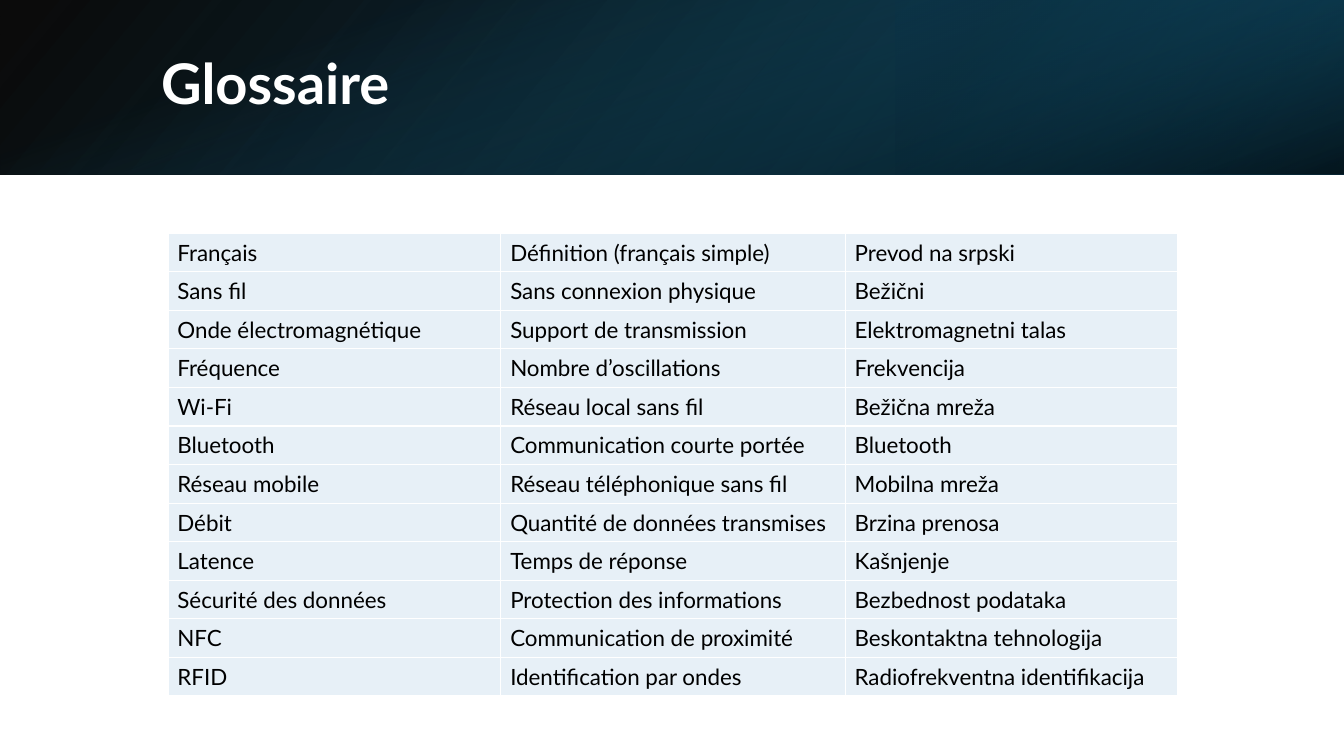
from dataclasses import dataclass

from lxml import etree
from pptx import Presentation
from pptx.dml.color import RGBColor
from pptx.enum.shapes import MSO_SHAPE
from pptx.enum.text import MSO_ANCHOR
from pptx.oxml import parse_xml
from pptx.oxml.ns import nsdecls, qn
from pptx.slide import Slide
from pptx.table import _Cell
from pptx.text.text import _Paragraph
from pptx.util import Emu, Pt

RECT = MSO_SHAPE.RECTANGLE
MIDDLE = MSO_ANCHOR.MIDDLE
SCALE = 9525
WIDTH, HEIGHT, BAND = 1280, 720, 166


@dataclass(frozen=True)
class Theme:
    font: str = "Lato"
    title: int = 40
    body: int = 16
    black: str = "000000"
    white: str = "FFFFFF"
    cell: str = "E7F0F7"
    teal: str = "156082"
    blue: str = "104862"
    navy: str = "0B3041"


@dataclass(frozen=True)
class Stop:
    pos: int
    color: str
    alpha: int


@dataclass(frozen=True)
class Layer:
    left: int
    top: int
    width: int
    height: int
    angle: int
    stops: tuple[Stop, ...]
    turn: int = 0
    flip: bool = False


THEME = Theme()
SIDE = (WIDTH - BAND) // 2
LAYERS = (
    Layer(0, 0, WIDTH, BAND, 140,
          (Stop(0, THEME.black, 96), Stop(100, THEME.blue, 100)), flip=True),
    Layer(853, 0, WIDTH - 853, BAND, 320,
          (Stop(19, THEME.navy, 68), Stop(100, THEME.teal, 79)), 180, True),
    Layer(SIDE, -SIDE, BAND, WIDTH, 340,
          (Stop(23, THEME.teal, 0), Stop(99, THEME.black, 74)), 90),
)
COLS = (317, 328, 317)
TERMS = (
    ("Français", "Définition (français simple)", "Prevod na srpski"),
    ("Sans fil", "Sans connexion physique", "Bežični"),
    ("Onde électromagnétique", "Support de transmission", "Elektromagnetni talas"),
    ("Fréquence", "Nombre d’oscillations", "Frekvencija"),
    ("Wi-Fi", "Réseau local sans fil", "Bežična mreža"),
    ("Bluetooth", "Communication courte portée", "Bluetooth"),
    ("Réseau mobile", "Réseau téléphonique sans fil", "Mobilna mreža"),
    ("Débit", "Quantité de données transmises", "Brzina prenosa"),
    ("Latence", "Temps de réponse", "Kašnjenje"),
    ("Sécurité des données", "Protection des informations", "Bezbednost podataka"),
    ("NFC", "Communication de proximité", "Beskontaktna tehnologija"),
    ("RFID", "Identification par ondes", "Radiofrekventna identifikacija"),
)


def px(size: int) -> Emu:
    return Emu(size * SCALE)


def style(para: _Paragraph, size: int, color: str, bold: bool = False) -> None:
    font = para.font
    font.name, font.size, font.bold = THEME.font, Pt(size), bold
    font.color.rgb = RGBColor.from_string(color)


def add_layer(slide: Slide, layer: Layer) -> None:
    """Draw a rectangle with a see-through linear gradient."""
    shape = slide.shapes.add_shape(RECT, px(layer.left), px(layer.top),
                                   px(layer.width), px(layer.height))
    shape.shadow.inherit = False
    shape.line.fill.background()
    shape.rotation = layer.turn
    props = shape.element.spPr
    if layer.flip:
        props.find(qn("a:xfrm")).set("flipH", "1")
    stops = "".join(
        f'<a:gs pos="{s.pos * 1000}"><a:srgbClr val="{s.color}">'
        f'<a:alpha val="{s.alpha * 1000}"/></a:srgbClr></a:gs>'
        for s in layer.stops)
    fill = parse_xml(
        f'<a:gradFill {nsdecls("a")} rotWithShape="1"><a:gsLst>{stops}</a:gsLst>'
        f'<a:lin ang="{layer.angle * 60000}" scaled="0"/></a:gradFill>')
    props.find(qn("a:prstGeom")).addnext(fill)


def add_title(slide: Slide, text: str) -> None:
    frame = slide.shapes.add_textbox(px(144), px(36), px(1054), px(92)).text_frame
    frame.word_wrap = True
    frame.vertical_anchor = MIDDLE
    para = frame.paragraphs[0]
    para.text = text
    para.line_spacing = 0.9
    style(para, THEME.title, THEME.white, bold=True)


def add_edges(cell: _Cell) -> None:
    props = cell._tc.get_or_add_tcPr()
    for side in ("lnL", "lnR", "lnT", "lnB"):
        line = etree.SubElement(props, qn(f"a:{side}"), w=str(Pt(1)))
        fill = etree.SubElement(line, qn("a:solidFill"))
        etree.SubElement(fill, qn("a:srgbClr"), val=THEME.white)


def fill_cell(cell: _Cell, text: str) -> None:
    cell.margin_left = cell.margin_right = px(9)
    cell.margin_top = cell.margin_bottom = px(4)
    cell.vertical_anchor = MIDDLE
    add_edges(cell)
    cell.fill.solid()
    cell.fill.fore_color.rgb = RGBColor.from_string(THEME.cell)
    cell.text = text
    style(cell.text_frame.paragraphs[0], THEME.body, THEME.black)


def add_terms(slide: Slide) -> None:
    high = px(441)
    table = slide.shapes.add_table(len(TERMS), len(COLS), px(160), px(222),
                                   px(sum(COLS)), high).table
    table.first_row = table.horz_banding = False
    for col, width in zip(table.columns, COLS):
        col.width = px(width)
    for row, terms in zip(table.rows, TERMS):
        row.height = Emu(high // len(TERMS))
        for cell, text in zip(row.cells, terms):
            fill_cell(cell, text)


def main() -> None:
    deck = Presentation()
    deck.slide_width, deck.slide_height = px(WIDTH), px(HEIGHT)
    slide = deck.slides.add_slide(deck.slide_layouts[6])
    for layer in LAYERS:
        add_layer(slide, layer)
    add_title(slide, "Glossaire")
    add_terms(slide)
    deck.save("out.pptx")


if __name__ == "__main__":
    main()
